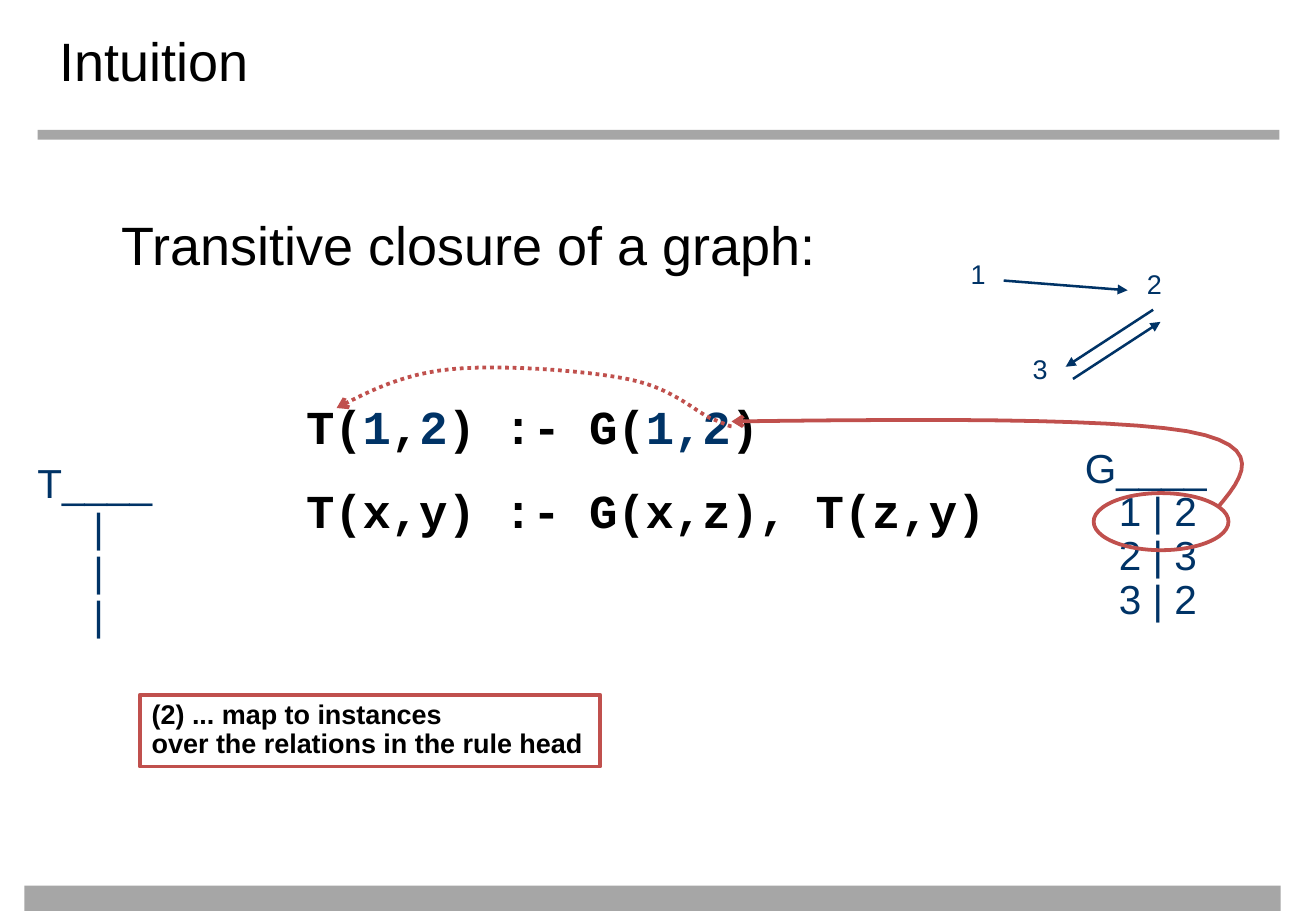
from pptx import Presentation
from pptx.dml.color import RGBColor
from pptx.enum.dml import MSO_LINE
from pptx.enum.shapes import MSO_CONNECTOR, MSO_SHAPE
from pptx.util import Inches, Pt
from pptx.oxml.ns import qn
from lxml.etree import SubElement

# Content: a paragraph is a list of (text, colour name) spans
TITLE = "Intuition"
HEADING = [("Transitive closure of a graph:", "black")]
RULES = [
    [("T(", "black"), ("1", "navy"), (",", "black"), ("2", "navy"),
     (") :- G(", "black"), ("1,2", "navy"), (")", "black")],
    [("T(x,y) :- G(x,z), T(z,y)", "black")],
]
CALLOUT = "(2) ... map to instances\vover the relations in the rule head"
# Relations: header, rows, left, top, row indent
RELATIONS = [
    ("G____", ["1 | 2", "2 | 3", "3 | 2"], 8.83, 3.64, 0.28),
    ("T____", ["|", "|", "|"], 0.21, 3.77, 0.46),
]
# Graph: node label positions and arrows (from, to)
NODES = {"1": (7.89, 2.1), "2": (9.34, 2.18), "3": (8.4, 2.88)}
EDGES = [((8.26, 2.31), (9.28, 2.39)), ((9.49, 2.55), (8.77, 3.02)),
         ((8.83, 3.12), (9.55, 2.65))]
# Curves: start point, then three control points per segment
FACT_CURVE = [(10.02, 4.18), (10.23, 3.93), (10.43, 3.67), (9.77, 3.55),
              (9.1, 3.44), (7.56, 3.45), (6.02, 3.47)]
HEAD_CURVE = [(6.02, 3.51), (6, 3.51), (5.99, 3.5), (5.84, 3.44),
              (5.7, 3.37), (5.52, 3.19), (5.16, 3.12),
              (4.81, 3.05), (4.11, 3), (3.71, 3.04),
              (3.31, 3.08), (3.04, 3.22), (2.77, 3.36)]
BARS = [(0.2, 7.29, 10.34, 0.21), (0.31, 1.07, 10.22, 0.08)]

THEME = {
    "black": RGBColor(0, 0, 0), "navy": RGBColor(0x00, 0x33, 0x66),
    "red": RGBColor(0xC0, 0x50, 0x4D), "grey": RGBColor(0xA6, 0xA6, 0xA6),
    "sans": "Arial", "mono": "Courier New",
    "large": 32, "code": 28, "table": 24, "small": 16,
    "thick": 2.25, "thin": 1.5,
}
CURVE_STEPS = 12

deck = Presentation()
deck.slide_width, deck.slide_height = Inches(10.83), Inches(7.5)
page = deck.slides.add_slide(deck.slide_layouts[6])


def add_text(frame, text, size="large", colour="black", font="sans", bold=False,
             spacing=None, before=0, indent=0, first=True):
    """Write one paragraph from a string or a list of coloured spans."""
    para = frame.paragraphs[0] if first else frame.add_paragraph()
    if indent:
        para._p.get_or_add_pPr().set("marL", str(Inches(indent)))
    para.space_before = Pt(before)
    if spacing:
        para.line_spacing = spacing
    for part, part_colour in ([(text, colour)] if isinstance(text, str) else text):
        for number, line in enumerate(part.split("\v")):
            if number:
                para.add_line_break()
            span = para.add_run()
            span.text = line
            span.font.name, span.font.size = THEME[font], Pt(THEME[size])
            span.font.bold, span.font.color.rgb = bold, THEME[part_colour]


def add_box(left, top, width, height, wrap=True, inset=(0.1, 0.05)):
    box = page.shapes.add_textbox(*map(Inches, (left, top, width, height)))
    frame = box.text_frame
    frame.word_wrap = wrap
    frame.margin_left = frame.margin_right = Inches(inset[0])
    frame.margin_top = frame.margin_bottom = Inches(inset[1])
    return frame


def add_shape(kind, place, fill=None, outline=None):
    shape = page.shapes.add_shape(kind, *map(Inches, place))
    shape.shadow.inherit = False
    if fill:
        shape.fill.solid()
        shape.fill.fore_color.rgb = THEME[fill]
    else:
        shape.fill.background()
    if outline:
        set_line(shape, outline, "thick")
    else:
        shape.line.fill.background()
    return shape


def set_line(shape, colour, width, arrow=None, dash=None):
    shape.line.color.rgb = THEME[colour]
    shape.line.width = Pt(THEME[width])
    if dash:
        shape.line.dash_style = dash
    if arrow:
        outline = shape.element.spPr.find(qn("a:ln"))
        SubElement(outline, qn("a:tailEnd")).set("type", arrow)


def add_curve(points, dash=None):
    """Trace cubic segments as short steps, with an arrow at the end."""
    trace = []
    for start in range(0, len(points) - 1, 3):
        controls = points[start:start + 4]
        for step in range(1, CURVE_STEPS + 1):
            t = step / CURVE_STEPS
            weights = ((1 - t) ** 3, 3 * t * (1 - t) ** 2, 3 * t * t * (1 - t), t ** 3)
            trace.append(tuple(
                Inches(sum(w * point[axis] for w, point in zip(weights, controls)))
                for axis in (0, 1)))
    builder = page.shapes.build_freeform(*map(Inches, points[0]))
    builder.add_line_segments(trace, close=False)
    curve = builder.convert_to_shape()
    curve.shadow.inherit = False
    curve.fill.background()
    set_line(curve, "red", "thick", "arrow", dash)


# Bars and title
for bar in BARS:
    add_shape(MSO_SHAPE.RECTANGLE, bar, fill="grey")
add_text(add_box(0.42, 0.25, 10, 0.56, inset=(0.07, 0.03)), TITLE, spacing=0.92)

# Heading and rules
body = add_box(0.9, 1.69, 9.22, 4.5)
add_text(body, HEADING)
for rule, gap in zip(RULES, (72, 16)):
    add_text(body, rule, size="code", font="mono", bold=True, before=gap,
             indent=1.52, first=False)

# Relations
for header, rows, left, top, indent in RELATIONS:
    relation = add_box(left, top, 1.39, 1.57)
    add_text(relation, header, size="table", colour="navy", spacing=0.9)
    for row in rows:
        add_text(relation, row, size="table", colour="navy", spacing=0.9,
                 indent=indent, first=False)

# Mapping curves, highlighted fact and callout
add_curve(FACT_CURVE)
add_shape(MSO_SHAPE.OVAL, (9, 4.06, 1.11, 0.47), outline="red")
callout = add_shape(MSO_SHAPE.RECTANGLE, (1.15, 5.72, 3.79, 0.59), outline="red")
callout.text_frame.word_wrap = False
callout.text_frame.paragraphs[0].alignment = 1  # left
add_text(callout.text_frame, CALLOUT, size="small", bold=True, spacing=0.9)
add_curve(HEAD_CURVE, dash=MSO_LINE.ROUND_DOT)

# Graph
for label, (left, top) in NODES.items():
    add_text(add_box(left, top, 0.33, 0.35, wrap=False), label,
             size="small", colour="navy", spacing=0.9)
for start, end in EDGES:
    edge = page.shapes.add_connector(MSO_CONNECTOR.STRAIGHT, *map(Inches, start + end))
    set_line(edge, "navy", "thin", "triangle")
    SubElement(edge.element.spPr, qn("a:effectLst"))

deck.save("out.pptx")
